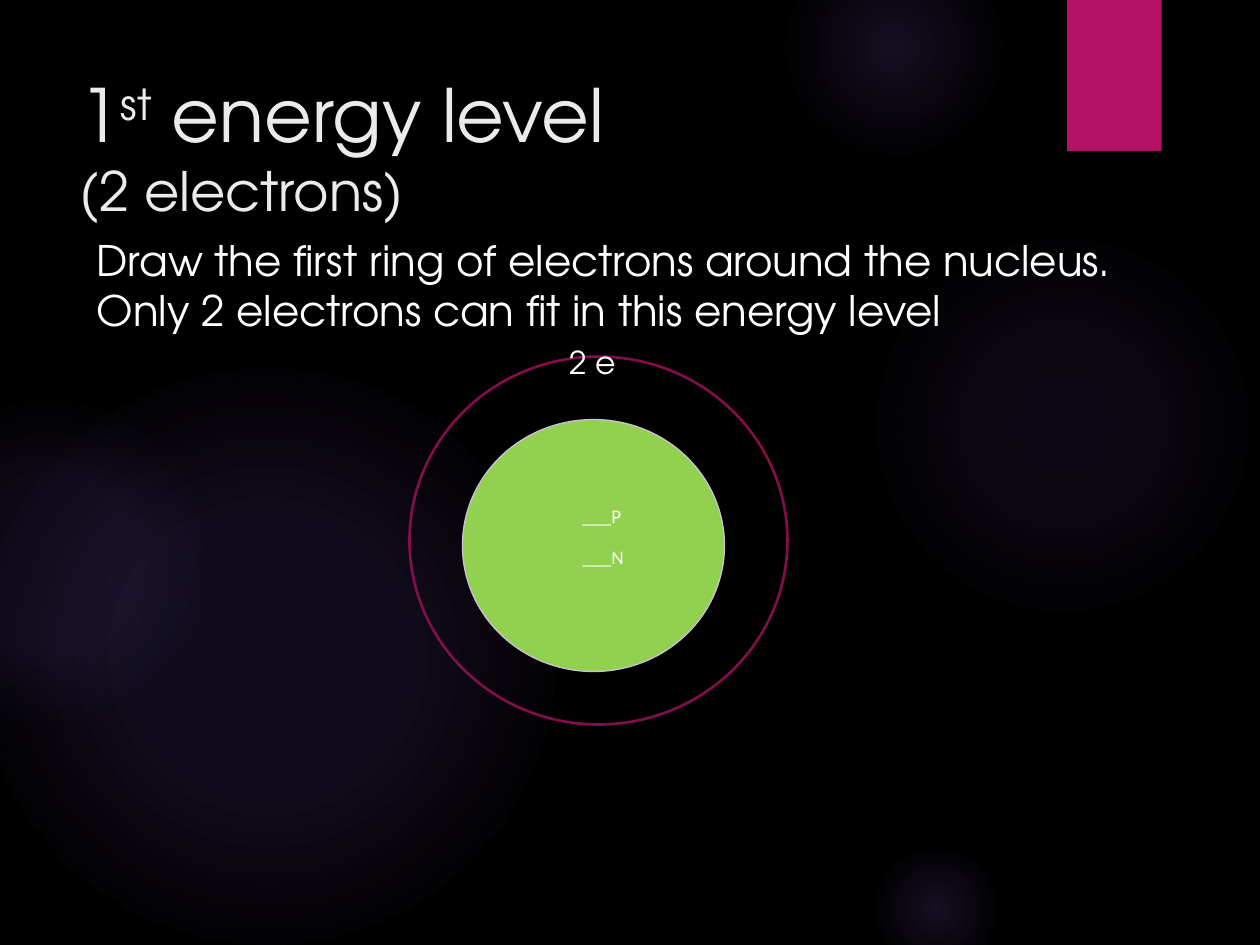
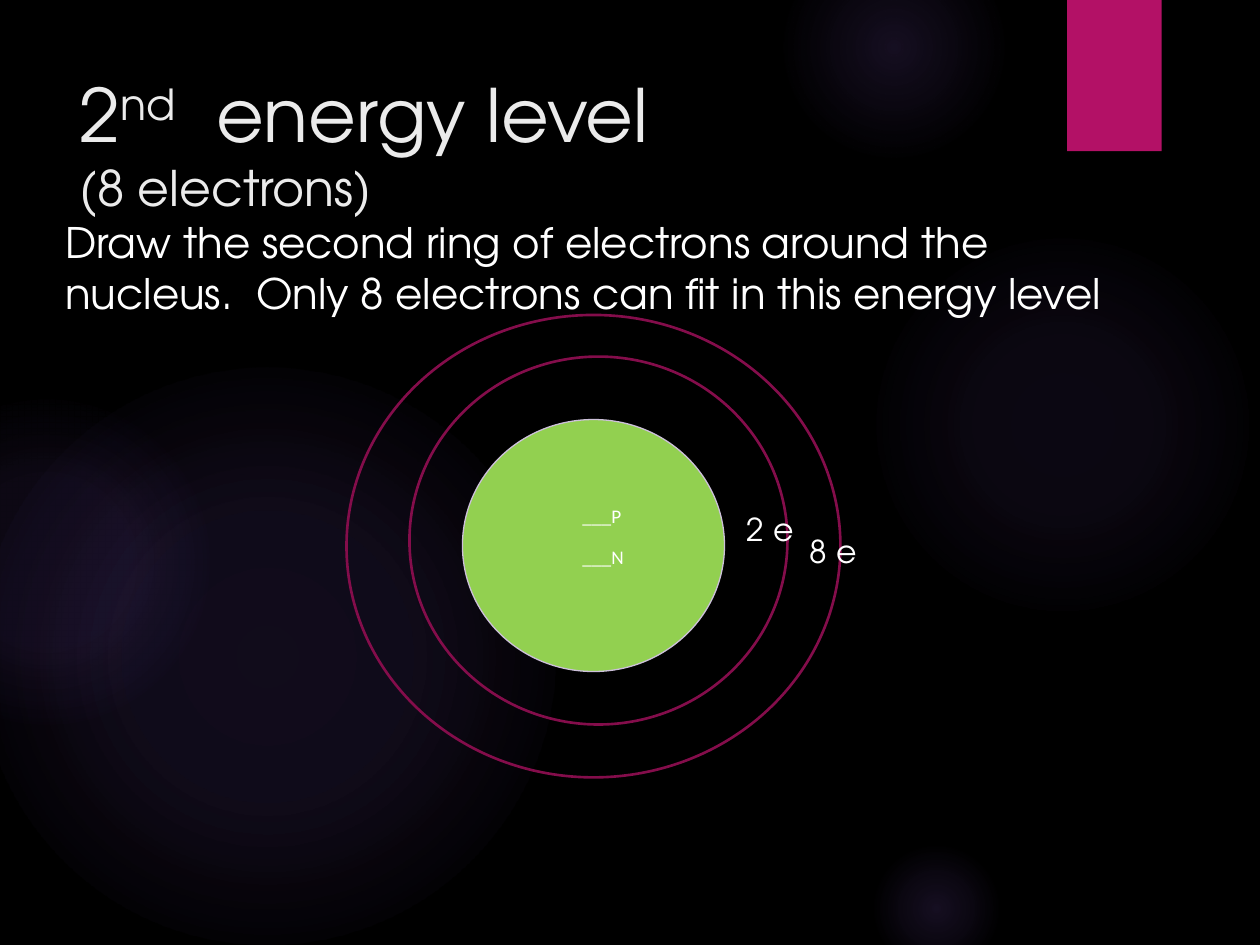
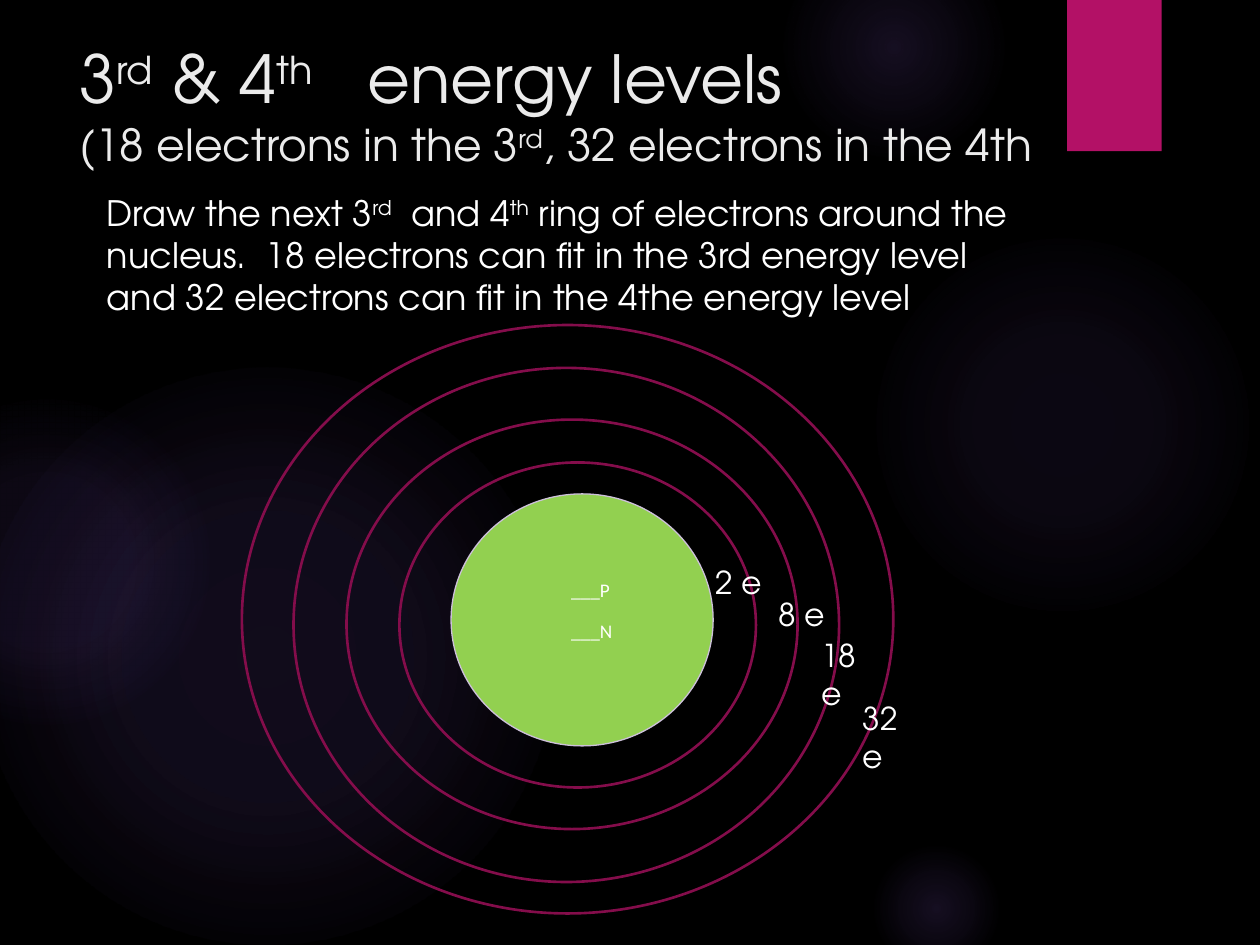
from pptx import Presentation
from pptx.dml.color import RGBColor
from pptx.enum.shapes import MSO_SHAPE
from pptx.enum.text import MSO_ANCHOR, MSO_AUTO_SIZE, PP_ALIGN
from pptx.oxml import parse_xml
from pptx.oxml.ns import nsdecls, qn
from pptx.util import Inches, Pt

OVAL, RECTANGLE = MSO_SHAPE.OVAL, MSO_SHAPE.RECTANGLE
LEFT, TOP = PP_ALIGN.LEFT, MSO_ANCHOR.TOP
NO_FIT, GROW = MSO_AUTO_SIZE.NONE, MSO_AUTO_SIZE.SHAPE_TO_FIT_TEXT

FONT, NUCLEUS_FONT = "TeX Gyre Adventor", "Calibri"
BLACK, WHITE, TITLE_COLOR = "000000", "FFFFFF", "EBEBEB"
GLOW, TAB, RING = "9B6BF2", "B31166", "840D4B"
NUCLEUS, NUCLEUS_EDGE = "92D050", "CCC0D9"
TITLE_ONLY = 5

GLOWS = [
    (6.89, 1.83, 3.08, [(0, 7), (36, 6), (69, 0)]),
    (6.22, -0.5, 1.75, [(0, 14), (36, 7), (73, 0)]),
    (6.89, 6.67, 1.08, [(0, 14), (36, 7), (66, 0)]),
    (-0.17, 2.92, 4.58, [(0, 11), (36, 10), (75, 0)]),
    (-0.92, 3.17, 2.58, [(0, 8), (36, 8), (72, 0)]),
]

SLIDES = [
    {
        "title": ["1^st^ energy level", "(2 electrons)"],
        "title_sizes": (42, 31),
        "title_box": (0.53, 0.5, 7.72, 1.53),
        "caption": "Draw the first ring of electrons around the nucleus.  "
                   "Only 2 electrons can fit in this energy level",
        "caption_box": (0.67, 1.81, 9, 0.91),
        "caption_size": 24,
        "nucleus": (3.67, 3.33),
        "rings": [(3.25, 2.83, 3, 2.92)],
        "labels": [("2 e", 4.42, 2.67, 0.75)],
    },
    {
        "title": ["2^nd^  energy level", "(8 electrons)"],
        "title_sizes": (42, 28),
        "title_box": (0.53, 0.5, 7.72, 1.53),
        "caption": "Draw the second ring of electrons around the nucleus.  "
                   "Only 8 electrons can fit in this energy level",
        "caption_box": (0.42, 1.67, 8.58, 0.91),
        "caption_size": 24,
        "nucleus": (3.67, 3.33),
        "rings": [(3.25, 2.83, 3, 2.92), (2.75, 2.5, 3.92, 3.67)],
        "labels": [("2 e", 5.83, 4, 0.75), ("8 e", 6.33, 4.17, 0.75)],
    },
    {
        "title": ["3^rd^ & 4^th^   energy levels",
                  "(18 electrons in the 3^rd^, 32 electrons in the 4th"],
        "title_sizes": (37.8, 25.2),
        "title_box": (0.53, 0.25, 8.39, 1.53),
        "caption": "Draw the next 3^rd^  and 4^th^ ring of electrons around the nucleus.  "
                   "18 electrons can fit in the 3rd energy level "
                   "and 32 electrons can fit in the 4the energy level",
        "caption_box": (0.75, 1.47, 7.5, 1.11),
        "caption_size": 20,
        "nucleus": (3.58, 3.92),
        "rings": [(3.17, 3.67, 2.83, 2.58), (2.75, 3.33, 3.58, 3.25),
                  (2.33, 2.92, 4.33, 4.08), (1.92, 2.58, 5.17, 4.67)],
        "labels": [("2 e", 5.58, 4.42, 0.75), ("8 e", 6.08, 4.67, 0.75),
                   ("18 e", 6.42, 5, 0.67), ("32 e", 6.75, 5.5, 0.67)],
    },
]


def rgb(value):
    return RGBColor.from_string(value)


def lengths(place):
    return [Inches(value) for value in place]


def set_font(font, size, color, name=FONT):
    font.name = name
    font.size = Pt(size)
    font.color.rgb = rgb(color)


def add_spans(para, text, size=None):
    for index, part in enumerate(text.split("^")):
        if not part:
            continue
        span = para.add_run()
        span.text = part
        if size:
            span.font.size = Pt(size)
        if index % 2:
            span.font._element.set("baseline", "30000")


def add_figure(page, kind, place, fill=None, line=None, width=1):
    figure = page.shapes.add_shape(kind, *lengths(place))
    figure.shadow.inherit = False
    if fill:
        figure.fill.solid()
        figure.fill.fore_color.rgb = rgb(fill)
    else:
        figure.fill.background()
    if line:
        figure.line.color.rgb = rgb(line)
        figure.line.width = Pt(width)
    else:
        figure.line.fill.background()
    return figure


def add_glow(page, left, top, size, stops):
    glow = add_figure(page, OVAL, (left, top, size, size))
    marks = "".join(
        f'<a:gs pos="{position * 1000}"><a:srgbClr val="{GLOW}">'
        f'<a:alpha val="{alpha * 1000}"/></a:srgbClr></a:gs>'
        for position, alpha in stops)
    gradient = parse_xml(
        f'<a:gradFill {nsdecls("a")} rotWithShape="1"><a:gsLst>{marks}</a:gsLst>'
        '<a:path path="circle"><a:fillToRect l="50000" t="50000" r="50000" b="50000"/>'
        '</a:path></a:gradFill>')
    properties = glow._element.spPr
    properties.replace(properties.find(qn("a:noFill")), gradient)
    return glow


def decorate_layout(layout, page):
    layout.background.fill.solid()
    layout.background.fill.fore_color.rgb = rgb(BLACK)
    for placeholder in list(layout.placeholders)[1:]:
        placeholder._element.getparent().remove(placeholder._element)
    backdrop = [add_glow(page, *glow) for glow in GLOWS]
    backdrop.append(add_figure(page, RECTANGLE, (8.47, 0, 0.75, 1.2), TAB))
    for offset, figure in enumerate(backdrop):
        layout.shapes._spTree.insert(2 + offset, figure._element)


def set_title(page, lines, sizes, place):
    title = page.shapes.title
    title.left, title.top, title.width, title.height = lengths(place)
    frame = title.text_frame
    frame.word_wrap = True
    frame.auto_size = NO_FIT
    frame.vertical_anchor = TOP
    para = frame.paragraphs[0]
    para.alignment = LEFT
    set_font(para.font, sizes[0], TITLE_COLOR)
    add_spans(para, lines[0])
    para.add_line_break()
    add_spans(para, lines[1], sizes[1])


def add_text(page, text, place, size):
    box = page.shapes.add_textbox(*lengths(place))
    frame = box.text_frame
    frame.word_wrap = True
    frame.auto_size = GROW
    para = frame.paragraphs[0]
    set_font(para.font, size, WHITE)
    add_spans(para, text)


def add_nucleus(page, left, top):
    nucleus = add_figure(page, OVAL, (left, top, 2.08, 2), NUCLEUS, NUCLEUS_EDGE, 0.75)
    frame = nucleus.text_frame
    frame.vertical_anchor = TOP
    frame.margin_top = Inches(0.38)
    frame.text = "___P\n___N"
    for para in frame.paragraphs:
        para.alignment = LEFT
        para.space_after = Pt(10)
        para._p.get_or_add_pPr().set("marL", str(Inches(0.55)))
        set_font(para.font, 11, WHITE, NUCLEUS_FONT)


def fill_page(page, content):
    set_title(page, content["title"], content["title_sizes"], content["title_box"])
    add_nucleus(page, *content["nucleus"])
    for ring in content["rings"]:
        add_figure(page, OVAL, ring, line=RING, width=1.5)
    for text, left, top, width in content["labels"]:
        add_text(page, text, (left, top, width, 0.4), 18)
    add_text(page, content["caption"], content["caption_box"], content["caption_size"])


def main():
    deck = Presentation()
    deck.slide_width, deck.slide_height = Inches(10), Inches(7.5)
    layout = deck.slide_layouts[TITLE_ONLY]
    pages = [deck.slides.add_slide(layout) for _ in SLIDES]
    decorate_layout(layout, pages[0])
    for page, content in zip(pages, SLIDES):
        fill_page(page, content)
    deck.save("out.pptx")


if __name__ == "__main__":
    main()
